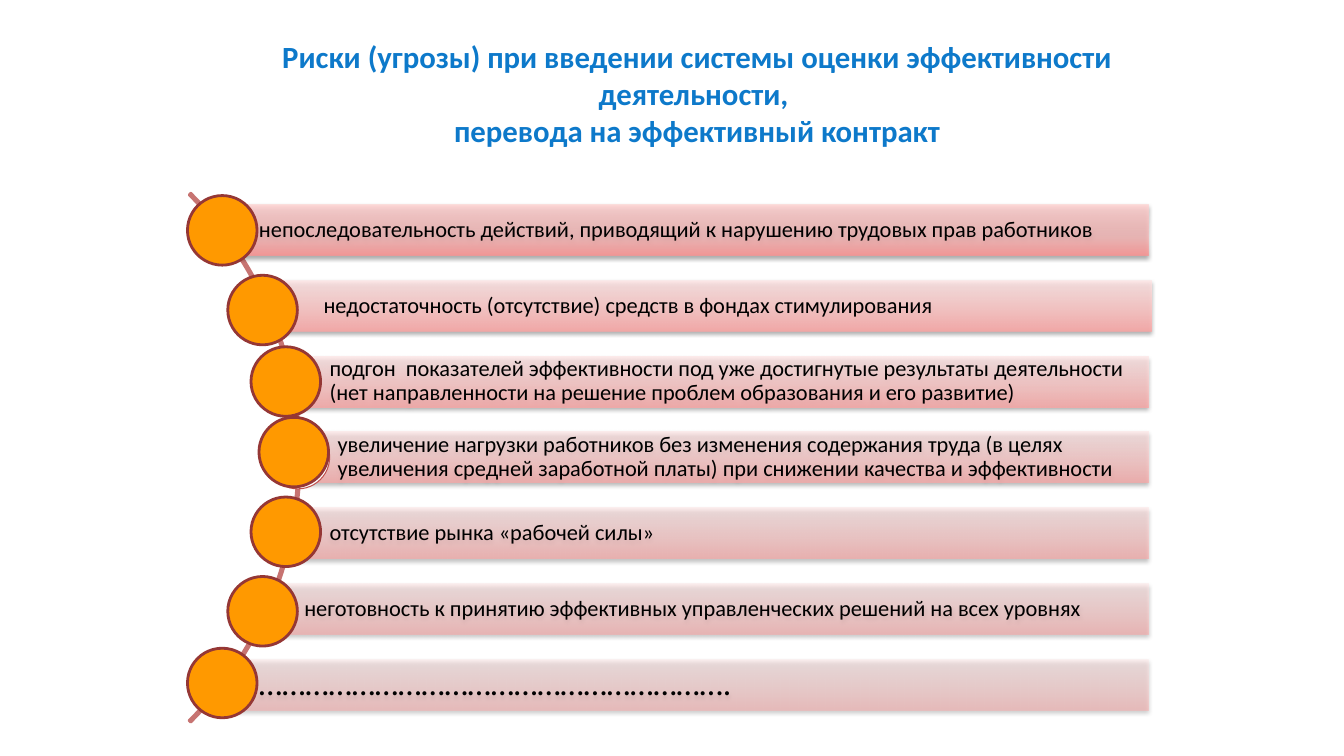
from lxml import etree
from pptx import Presentation
from pptx.dml.color import RGBColor
from pptx.enum import shapes, text
from pptx.oxml import ns
from pptx.util import Pt

COLORS = {
    "title": "0D79CA", "text": "000000", "arc": "C77472", "shadow": "000000",
    "disc": "FF9900", "rim": "953735", "under": "FFFFFF", "under_rim": "C0504D",
}
STRONG = ((0, "FB9493", 90), (39, "FFADAC", 60), (100, "FFD6D5", 90))
SOFT = ((0, "FFA6A5"), (35, "FFC0BF"), (100, "FFE7E7"))
FONT = "Calibri"
TITLE = ("Риски (угрозы) при введении системы оценки эффективности деятельности, "
         "\vперевода на эффективный контракт")
BAR_HEIGHT = 36.4
BAR_STEP = 54.12
DISC_SIZE = 49.7
RISKS = [
    ("непоследовательность действий, приводящий к нарушению трудовых прав работников",
     (156.2, 820.5), (133.9, 139.7), 90),
    ("недостаточность (отсутствие) средств в фондах стимулирования",
     (202.3, 822.2), (162.7, 196.6), 83),
    ("подгон  показателей эффективности под уже достигнутые результаты деятельности "
     "(нет направленности на решение проблем образования и его развитие)",
     (206.6, 820.5), (179.3, 247.7), 77),
    ("увеличение нагрузки работников без изменения содержания труда (в целях "
     "увеличения средней заработной платы) при снижении качества и эффективности",
     (212.4, 820.5), (185, 298.1), 70),
    ("отсутствие рынка «рабочей силы»", (206.6, 820.5), (179.3, 355), 63),
    ("неготовность к принятию эффективных управленческих решений на всех уровнях",
     (188.6, 820.5), (162.7, 411.8), 57),
    ("…………………………………………………….", (156.2, 820.5), (133.9, 463), 50),
]


def color(name):
    return RGBColor.from_string(COLORS[name])


def add_preset(page, kind, box):
    shape = page.shapes.add_shape(kind, *(Pt(length) for length in box))
    shape.shadow.inherit = False
    return shape


def add_color(parent, value, alpha):
    node = etree.SubElement(parent, ns.qn("a:srgbClr"), val=value)
    etree.SubElement(node, ns.qn("a:alpha"), val=str(alpha * 1000))


def set_gradient(shape, stops):
    shape.fill.gradient()
    shape.fill.gradient_angle = 90
    stop_list = next(shape.element.iter(ns.qn("a:gsLst")))
    for stop in list(stop_list):
        stop_list.remove(stop)
    for position, value, alpha in stops:
        stop = etree.SubElement(stop_list, ns.qn("a:gs"), pos=str(position * 1000))
        add_color(stop, value, alpha)


def set_shadow(shape):
    effects = next(shape.element.iter(ns.qn("a:effectLst")))
    shadow = etree.SubElement(
        effects, ns.qn("a:outerShdw"), blurRad=str(Pt(3.1)), dist=str(Pt(1.6)),
        dir="5400000", rotWithShape="0")
    add_color(shadow, COLORS["shadow"], 38)


def write(frame, wording, size, shade, align, bold=False):
    frame.text = wording
    frame.word_wrap = True
    frame.auto_size = text.MSO_AUTO_SIZE.NONE
    frame.vertical_anchor = text.MSO_ANCHOR.MIDDLE
    for para in frame.paragraphs:
        para.alignment = align
        for span in para.runs:
            span.font.name = FONT
            span.font.size = Pt(size)
            span.font.bold = bold
            span.font.color.rgb = color(shade)


def add_title(page, box):
    title = page.shapes.title
    title.left, title.top, title.width, title.height = (Pt(length) for length in box)
    write(title.text_frame, TITLE, 22, "title", text.PP_ALIGN.CENTER, True)


def add_arc(page, box):
    arc = add_preset(page, shapes.MSO_SHAPE.BLOCK_ARC, box)
    for index, value in enumerate((189, 27, 0.003)):
        arc.adjustments[index] = value
    arc.fill.background()
    arc.line.color.rgb = color("arc")
    arc.line.width = Pt(2)


def add_bar(page, box, wording, stops, size, inset):
    bar = add_preset(page, shapes.MSO_SHAPE.RECTANGLE, box)
    set_gradient(bar, stops)
    bar.line.fill.background()
    set_shadow(bar)
    frame = bar.text_frame
    write(frame, wording, size, "text", text.PP_ALIGN.LEFT)
    frame.margin_left = Pt(28.8)
    frame.margin_top = frame.margin_right = frame.margin_bottom = Pt(inset)
    frame.paragraphs[0].line_spacing = 0.9


def add_disc(page, box, fill, rim, width):
    disc = add_preset(page, shapes.MSO_SHAPE.OVAL, box)
    disc.fill.solid()
    disc.fill.fore_color.rgb = color(fill)
    disc.line.color.rgb = color(rim)
    disc.line.width = Pt(width)


def add_risks(page, top):
    last = len(RISKS) - 1
    for index, (wording, (left, right), _, alpha) in enumerate(RISKS):
        stops = STRONG if index == 0 else [(*stop, alpha) for stop in SOFT]
        size, inset = (24, 5) if index == last else (16, 2.9)
        box = (left, top + index * BAR_STEP, right - left, BAR_HEIGHT)
        add_bar(page, box, wording, stops, size, inset)
    add_disc(page, (190.1, 303.8, 45.4, 45.4), "under", "under_rim", 0.75)
    for _, _, corner, _ in RISKS:
        add_disc(page, (*corner, DISC_SIZE, DISC_SIZE), "disc", "rim", 2)


def main():
    deck = Presentation()
    deck.slide_width, deck.slide_height = Pt(960), Pt(540)
    page = deck.slides.add_slide(deck.slide_layouts[5])
    add_title(page, (190.8, 20.2, 614.2, 92.2))
    add_arc(page, (-319.7, 59.8, 534.2, 534.2))
    add_risks(page, 146.2)
    deck.save("out.pptx")


if __name__ == "__main__":
    main()
